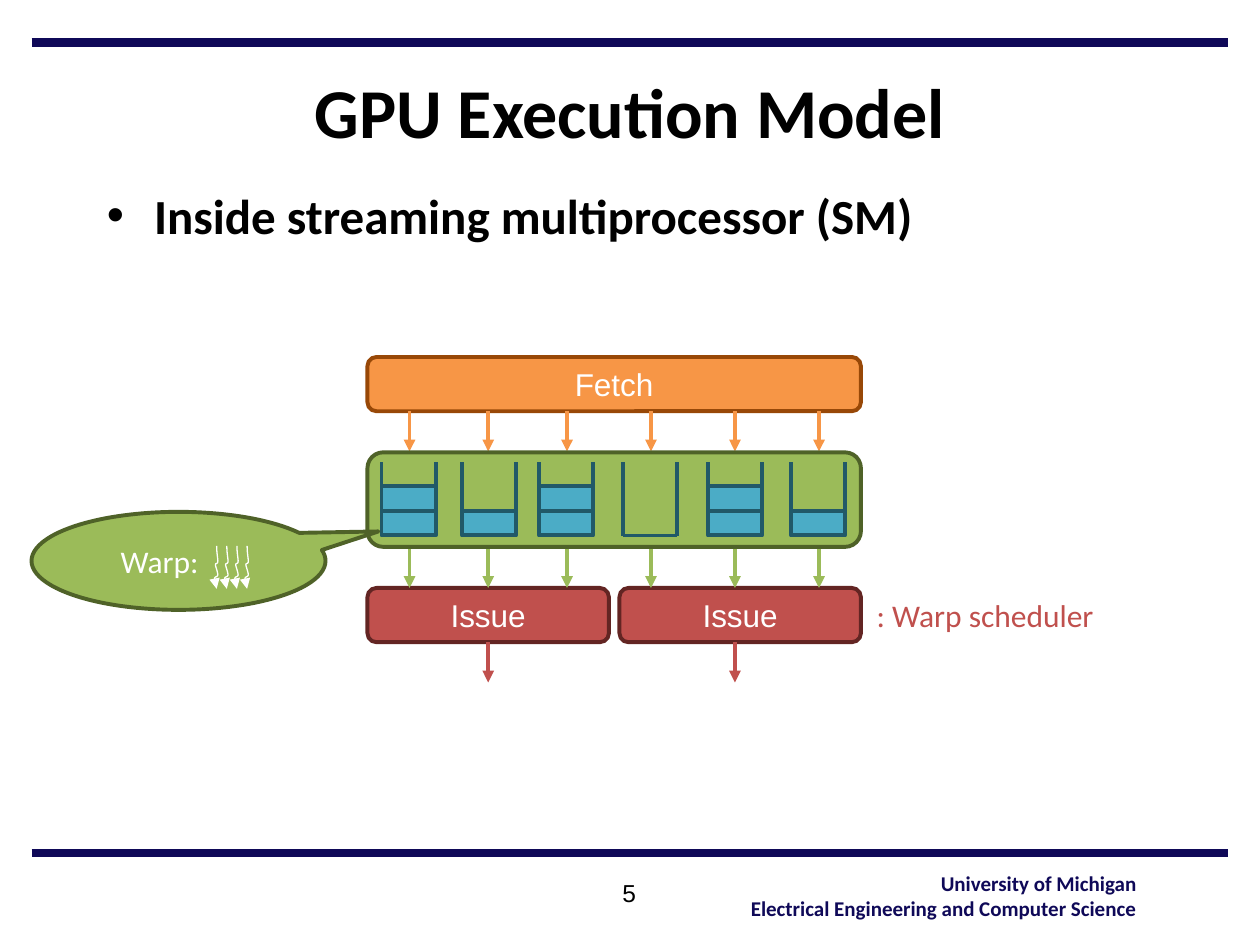
from lxml import etree
from pptx import Presentation
from pptx import util as u
from pptx.dml.color import RGBColor
from pptx.enum import shapes, text
from pptx.oxml import ns

Pt = u.Pt
NAVY = RGBColor(0x0F, 0x09, 0x58)
BLACK = RGBColor(0, 0, 0)
WHITE = RGBColor(0xFF, 0xFF, 0xFF)
ORANGE = RGBColor(0xF7, 0x96, 0x46)
DARK_ORANGE = RGBColor(0x98, 0x48, 0x07)
RED = RGBColor(0xC0, 0x50, 0x4D)
DARK_RED = RGBColor(0x63, 0x25, 0x23)
GREEN = RGBColor(0x9B, 0xBB, 0x59)
DARK_GREEN = RGBColor(0x4F, 0x62, 0x28)
TEAL = RGBColor(0x4B, 0xAC, 0xC6)
DARK_TEAL = RGBColor(0x21, 0x59, 0x68)

CENTER, RIGHT = text.PP_ALIGN.CENTER, text.PP_ALIGN.RIGHT
MIDDLE, TOP = text.MSO_ANCHOR.MIDDLE, text.MSO_ANCHOR.TOP
ROUND, RECT = shapes.MSO_SHAPE.ROUNDED_RECTANGLE, shapes.MSO_SHAPE.RECTANGLE

# Left edge of each warp queue and the number of warps waiting in it
QUEUES = [(218, 2), (264, 1), (308, 2), (356, 0), (404.5, 2), (452, 1)]
QUEUE_W, SLOT_H, QUEUE_TOP, QUEUE_BOTTOM = 31, 14, 264.25, 306
SIDE_END = {0: QUEUE_BOTTOM, 1: 299, 2: QUEUE_BOTTOM - 2 * SLOT_H}
ARROW_XS = [234, 279, 324, 372, 420, 468]

# Bezier curves of one thread, as offsets from its top
THREAD = [
    [(0, 3.6), (0.7, 7.2), (0.7, 8.6)],
    [(0.7, 10.8), (-0.7, 9.4), (-0.7, 10.8)],
    [(-0.7, 11.5), (0.7, 15.1), (0.7, 16.6)],
    [(0.4, 18), (-1.2, 17.3), (-1.2, 18.7)],
    [(-1.2, 19.4), (0, 23), (0, 24.5)],
]


def child(parent, tag, **attrs):
    return etree.SubElement(parent, ns.qn(tag), attrs)


def add_arrowhead(line):
    child(line._get_or_add_ln(), "a:tailEnd", type="triangle")


def bezier(p0, p1, p2, p3, steps=6):
    """Points along a cubic curve, without its start."""
    for i in range(1, steps + 1):
        t = i / steps
        weights = (1 - t) ** 3, 3 * t * (1 - t) ** 2, 3 * t * t * (1 - t), t ** 3
        yield tuple(sum(w * p[k] for w, p in zip(weights, (p0, p1, p2, p3)))
                    for k in (0, 1))


def write(tf, content, size=18, font="Calibri", color=BLACK, bold=False,
          align=None, anchor=TOP, wrap=True, grow=False, bullet=False):
    tf.word_wrap = wrap
    tf.vertical_anchor = anchor
    tf.auto_size = (text.MSO_AUTO_SIZE.SHAPE_TO_FIT_TEXT if grow
                    else text.MSO_AUTO_SIZE.NONE)
    for i, words in enumerate(content.split("\n")):
        p = tf.add_paragraph() if i else tf.paragraphs[0]
        if align is not None:
            p.alignment = align
        if bullet:
            ppr = p._p.get_or_add_pPr()
            ppr.set("marL", str(Pt(27)))
            ppr.set("indent", str(-Pt(27)))
            child(ppr, "a:buFont", typeface="Arial")
            child(ppr, "a:buChar", char="•")
        r = p.add_run()
        r.text = words
        r.font.name, r.font.size, r.font.bold = font, Pt(size), bold
        r.font.color.rgb = color


class Canvas:
    """The current slide and the line width its elements share."""

    def __init__(self, slide, line_width=2.25):
        self.shapes = slide.shapes
        self.line_width = line_width

    def label(self, content, x, y, w, h, **fmt):
        tb = self.shapes.add_textbox(Pt(x), Pt(y), Pt(w), Pt(h))
        write(tb.text_frame, content, **fmt)

    def box(self, kind, x, y, w, h, fill, outline, content=None):
        sp = self.shapes.add_shape(kind, Pt(x), Pt(y), Pt(w), Pt(h))
        sp.shadow.inherit = False
        sp.fill.solid()
        sp.fill.fore_color.rgb = fill
        sp.line.color.rgb = outline
        sp.line.width = Pt(self.line_width)
        if content:
            write(sp.text_frame, content, font="Arial", color=WHITE,
                  align=CENTER, anchor=MIDDLE, wrap=False)
        return sp

    def line(self, x1, y1, x2, y2, color, width=None, arrow=False):
        c = self.shapes.add_connector(shapes.MSO_CONNECTOR.STRAIGHT,
                                      Pt(x1), Pt(y1), Pt(x2), Pt(y2))
        c.line.color.rgb = color
        c.line.width = Pt(width or self.line_width)
        if arrow:
            add_arrowhead(c.line)
        child(c._element.spPr, "a:effectLst")
        return c

    def arrow_down(self, x, y, color):
        return self.line(x, y, x, y + 23, color, arrow=True)

    def queue(self, x, warps):
        """An open-topped queue with its waiting warps stacked from the bottom."""
        for n in range(1, warps + 1):
            self.box(RECT, x, QUEUE_BOTTOM - n * SLOT_H, QUEUE_W, SLOT_H,
                     TEAL, DARK_TEAL)
        for side in (x, x + QUEUE_W):
            self.line(side, QUEUE_TOP, side, SIDE_END[warps], DARK_TEAL)
        if not warps:
            self.line(x, QUEUE_BOTTOM, x + QUEUE_W, QUEUE_BOTTOM, DARK_TEAL)

    def thread(self, x, y):
        pen, points = (0, 0), []
        for curve in THREAD:
            points += bezier(pen, *curve)
            pen = curve[-1]
        fb = self.shapes.build_freeform(Pt(x), Pt(y))
        fb.add_line_segments([(Pt(x + dx), Pt(y + dy)) for dx, dy in points],
                             close=False)
        sp = fb.convert_to_shape()
        sp.shadow.inherit = False
        sp.fill.background()
        sp.line.color.rgb = WHITE
        sp.line.width = Pt(0.75)
        add_arrowhead(sp.line)


def main():
    prs = Presentation()
    prs.slide_width, prs.slide_height = Pt(720), Pt(540)
    s = Canvas(prs.slides.add_slide(prs.slide_layouts[6]))

    for y in (24.5, 487.5):
        s.line(18, y, 701.5, y, NAVY, width=5)
    s.label("University of Michigan\nElectrical Engineering and Computer Science",
            419, 494, 237.6, 36, size=12, color=NAVY, bold=True,
            align=RIGHT, wrap=False, grow=True)
    s.label("GPU Execution Model", 54, 30, 612, 66, size=40, bold=True,
            align=CENTER, anchor=MIDDLE)
    s.label("Inside streaming multiprocessor (SM)", 54, 102.5, 612, 46,
            size=28, bold=True, bullet=True)
    s.label("5", 284.5, 498, 150, 36, size=14, font="Arial", align=CENTER)

    s.box(ROUND, 210, 204, 282, 31, ORANGE, DARK_ORANGE, "Fetch")
    issues = [s.box(ROUND, x, 336, 138, 31, RED, DARK_RED, "Issue")
              for x in (210, 354)]
    for x in ARROW_XS:
        s.arrow_down(x, 235, ORANGE)
    to_issue = [s.arrow_down(x, 313, GREEN) for x in ARROW_XS]
    to_issue[1].end_connect(issues[0], 0)
    s.box(ROUND, 210, 258.5, 282, 54, GREEN, DARK_GREEN)
    for x, warps in QUEUES:
        s.queue(x, warps)

    callout = s.box(shapes.MSO_SHAPE.OVAL_CALLOUT, 18, 292.5, 168, 56,
                    GREEN, DARK_GREEN)
    callout.adjustments[0], callout.adjustments[1] = 0.68, -0.3
    for i in range(4):
        s.thread(123.8 + 5.8 * i, 312)
    s.label("Warp:", 60, 306, 62.5, 29, color=WHITE, align=CENTER, grow=True)
    s.label(": Warp scheduler", 489.5, 337, 147, 29, color=RED,
            align=CENTER, grow=True)

    issued = [s.arrow_down(x, 367, RED) for x in (ARROW_XS[1], ARROW_XS[4])]
    issued[0].begin_connect(issues[0], 2)
    prs.save("out.pptx")


if __name__ == "__main__":
    main()
